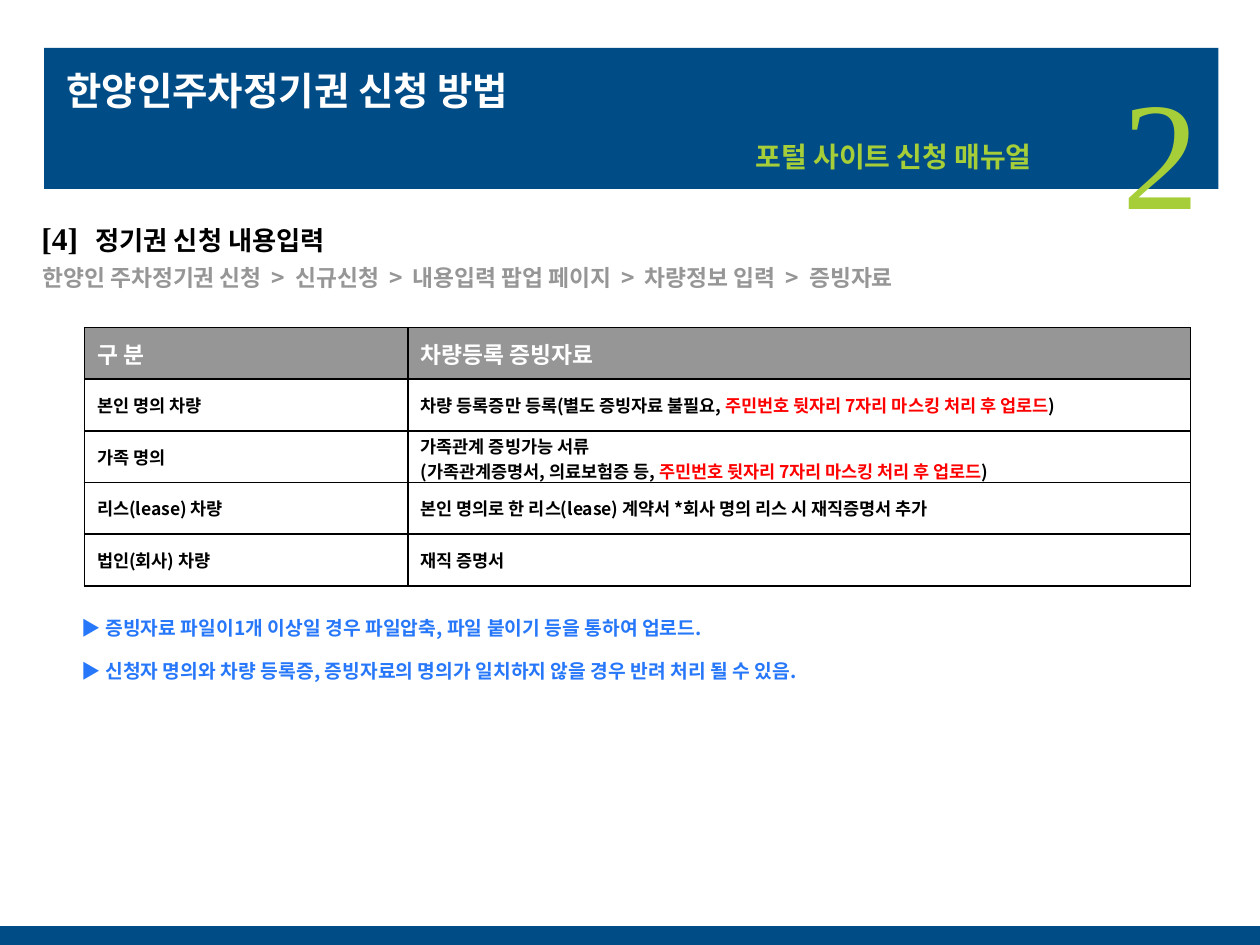
import pptx
import pptx.dml.color
import pptx.enum.shapes
import pptx.enum.text
import pptx.oxml.ns
import pptx.util
from lxml import etree
from pptx.util import Inches

SANS, SERIF = "Noto Sans CJK KR", "Times New Roman"
NAVY, LIME, GRAY, BLUE = "004C86", "A6CE39", "969696", "2677FA"
BLACK, WHITE, RED = "000000", "FFFFFF", "FF0000"
MASKING = "주민번호 뒷자리 7자리 마스킹 처리 후 업로드"
ROWS = [
    ("구 분", [["차량등록 증빙자료"]]),
    ("본인 명의 차량", [["차량 등록증만 등록(별도 증빙자료 불필요, ", MASKING, ")"]]),
    ("가족 명의", [["가족관계 증빙가능 서류"],
               ["(가족관계증명서, 의료보험증 등, ", MASKING, ")"]]),
    ("리스(lease) 차량", [["본인 명의로 한 리스(lease) 계약서 *회사 명의 리스 시 재직증명서 추가"]]),
    ("법인(회사) 차량", [["재직 증명서"]]),
]
NOTES = [
    "▶ 증빙자료 파일이1개 이상일 경우 파일압축, 파일 붙이기 등을 통하여 업로드.",
    "▶ 신청자 명의와 차량 등록증, 증빙자료의 명의가 일치하지 않을 경우 반려 처리 될 수 있음.",
]


def rgb(value):
    """Return a colour from a hex string."""
    return pptx.dml.color.RGBColor.from_string(value)


def set_attrs(obj, values):
    """Set each named attribute of an object."""
    for name, value in values.items():
        setattr(obj, name, value)


def add_run(p, text, size, color, name=SANS, bold=True):
    """Append a formatted run, with one typeface for Latin and Korean."""
    r = p.add_run()
    r.text = text
    set_attrs(r.font, {"size": pptx.util.Pt(size), "bold": bold, "name": name})
    r.font.color.rgb = rgb(color)
    ea = etree.SubElement(r.font._element, pptx.oxml.ns.qn("a:ea"))
    ea.set("typeface", name)


def add_bar(s, left, top, width, height):
    """Add a plain navy bar."""
    sp = s.shapes.add_shape(pptx.enum.shapes.MSO_SHAPE.RECTANGLE,
                            *map(Inches, (left, top, width, height)))
    sp.shadow.inherit = False
    sp.fill.solid()
    sp.fill.fore_color.rgb = rgb(NAVY)
    sp.line.fill.background()


def add_text(s, box, runs, align=None, **frame):
    """Add a one-paragraph text box and return its paragraph."""
    tf = s.shapes.add_textbox(*map(Inches, box)).text_frame
    set_attrs(tf, {"word_wrap": True, **frame})
    p = tf.paragraphs[0]
    p.alignment = align
    for run in runs:
        add_run(p, *run)
    return p


def add_tab_stop(p, pos):
    """Give a paragraph one left tab stop."""
    tabs = etree.SubElement(p._p.get_or_add_pPr(), pptx.oxml.ns.qn("a:tabLst"))
    etree.SubElement(tabs, pptx.oxml.ns.qn("a:tab"), pos=str(Inches(pos)), algn="l")


def set_borders(cell, color, width):
    """Draw all four borders of a cell."""
    tcPr = cell._tc.get_or_add_tcPr()
    for i, side in enumerate(("lnL", "lnR", "lnT", "lnB")):
        ln = etree.Element(pptx.oxml.ns.qn("a:" + side), w=str(pptx.util.Pt(width)))
        fill = etree.SubElement(ln, pptx.oxml.ns.qn("a:solidFill"))
        etree.SubElement(fill, pptx.oxml.ns.qn("a:srgbClr"), val=color)
        tcPr.insert(i, ln)


def fill_cell(cell, lines, header):
    """Format a cell and write its lines."""
    set_attrs(cell, {"vertical_anchor": pptx.enum.text.MSO_ANCHOR.MIDDLE,
                     "margin_top": Inches(0.02), "margin_bottom": Inches(0.02)})
    cell.fill.solid()
    cell.fill.fore_color.rgb = rgb(GRAY if header else WHITE)
    set_borders(cell, BLACK, 1)
    size, color = (13, WHITE) if header else (10, BLACK)
    tf = cell.text_frame
    for i, line in enumerate(lines):
        p = tf.add_paragraph() if i else tf.paragraphs[0]
        for text in line:
            add_run(p, text, size, RED if text == MASKING else color)


def add_documents_table(s):
    """Add the table of supporting documents."""
    table = s.shapes.add_table(len(ROWS), 2, Inches(0.67), Inches(2.6),
                               Inches(8.78), Inches(2.05)).table
    set_attrs(table, {"first_row": False, "horz_banding": False})
    for col, width in zip(table.columns, (2.57, 6.21)):
        col.width = Inches(width)
    for i, (kind, lines) in enumerate(ROWS):
        fill_cell(table.cell(i, 0), [[kind]], i == 0)
        fill_cell(table.cell(i, 1), lines, i == 0)


def main():
    """Build the slide and save it."""
    prs = pptx.Presentation()
    set_attrs(prs, {"slide_width": Inches(10), "slide_height": Inches(7.5)})
    s = prs.slides.add_slide(prs.slide_layouts[6])
    add_bar(s, 0.35, 0.38, 9.32, 1.12)
    add_bar(s, 0, 7.35, 10, 0.15)
    add_text(s, (8.77, 0.26, 0.85, 1.46), [("2", 88, LIME, SERIF, False)],
             pptx.enum.text.PP_ALIGN.RIGHT, margin_top=Inches(0.18))
    add_text(s, (0.43, 0.23, 4.12, 0.97), [("한양인주차정기권 신청 방법", 22, WHITE)],
             vertical_anchor=pptx.enum.text.MSO_ANCHOR.MIDDLE)
    add_text(s, (5.9, 1.06, 2.87, 0.37), [("포털 사이트 신청 매뉴얼", 16, LIME)])
    p = add_text(s, (0.23, 1.69, 7.41, 0.4), [("[4]", 18, BLACK, SERIF),
                                              ("\t정기권 신청 내용입력", 15, BLACK)])
    add_tab_stop(p, 0.43)
    steps = ("한양인 주차정기권 신청", "신규신청", "내용입력 팝업 페이지", "차량정보 입력", "증빙자료")
    add_text(s, (0.24, 2.04, 8.34, 0.32), [("  >  ".join(steps), 13, GRAY)])
    add_documents_table(s)
    for i, note in enumerate(NOTES):
        add_text(s, (0.55, 4.84 + 0.34 * i, 7.62, 0.29), [(note, 11, BLUE)])
    prs.save("out.pptx")


if __name__ == "__main__":
    main()
